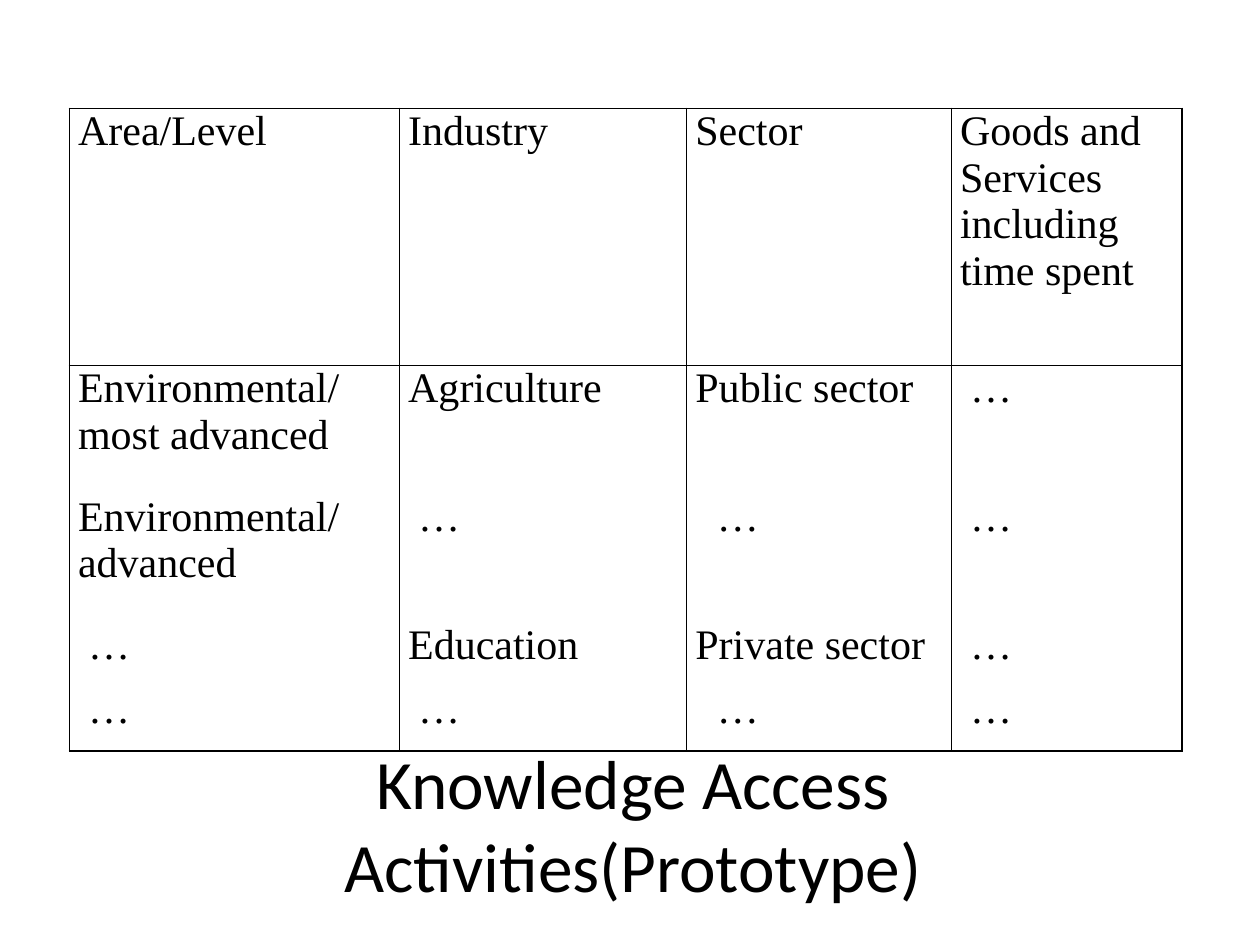
"""Build the knowledge access activities slide: a ruled table above its title."""
from lxml.etree import SubElement
from pptx import Presentation
from pptx.dml.color import RGBColor
from pptx.enum.text import MSO_ANCHOR, PP_ALIGN
from pptx.oxml.ns import qn
from pptx.util import Inches, Pt

BLACK = RGBColor(0, 0, 0)
TITLE = "Knowledge Access Activities(Prototype)"
ACTIVITIES = [
    ["Area/Level", "Industry", "Sector", "Goods and Services including time spent"],
    ["Environmental/most advanced", "Agriculture", "Public sector", "…"],
    ["Environmental/ advanced", "…", "…", "…"],
    ["…", "Education", "Private sector", "…"],
    ["…", "…", "…", "…"],
]
COLUMN_WIDTHS = [2.62, 2.28, 2.1, 1.83]
ELLIPSIS_INDENTS = [0.08, 0.08, 0.17, 0.08]
ROW_UNIT = 0.51
ROW_UNITS = [4, 2, 2, 1, 1]
LEFT, TOP = 0.55, 0.86
TITLE_WIDTH, TITLE_HEIGHT = 8.95, 1.15


def add_run(paragraph, text, font_name, size):
    run = paragraph.add_run()
    run.text = text
    run.font.name = font_name
    run.font.size = Pt(size)
    run.font.color.rgb = BLACK


def rule_cell(cell, visible_sides):
    properties = cell._tc.get_or_add_tcPr()
    for side in "LRTB":
        rule = SubElement(properties, qn(f"a:ln{side}"), w=str(Pt(1)))
        if side in visible_sides:
            fill = SubElement(rule, qn("a:solidFill"))
            SubElement(fill, qn("a:srgbClr"), val=str(BLACK))
        else:
            SubElement(rule, qn("a:noFill"))
    cell.fill.background()


def fill_cell(cell, text, indent):
    cell.margin_left = cell.margin_right = Inches(0.07)
    cell.margin_top = cell.margin_bottom = 0
    cell.vertical_anchor = MSO_ANCHOR.TOP
    paragraph = cell.text_frame.paragraphs[0]
    if text == "…":
        paragraph._p.get_or_add_pPr().set("indent", str(Inches(indent)))
    add_run(paragraph, text, "Times New Roman", 24)


def add_activities(slide):
    height = ROW_UNIT * sum(ROW_UNITS)
    table = slide.shapes.add_table(
        len(ACTIVITIES), len(COLUMN_WIDTHS), Inches(LEFT), Inches(TOP),
        Inches(sum(COLUMN_WIDTHS)), Inches(height)).table
    table.first_row = table.horz_banding = False
    for column, width in zip(table.columns, COLUMN_WIDTHS):
        column.width = Inches(width)
    last = len(ACTIVITIES) - 1
    for r, (texts, units) in enumerate(zip(ACTIVITIES, ROW_UNITS)):
        table.rows[r].height = Inches(units * ROW_UNIT)
        sides = "LR" + ("T" if r <= 1 else "") + ("B" if r in (0, last) else "")
        for c, (text, indent) in enumerate(zip(texts, ELLIPSIS_INDENTS)):
            rule_cell(table.cell(r, c), sides)
            fill_cell(table.cell(r, c), text, indent)
    return TOP + height


def add_title(slide, top):
    title = slide.shapes.title
    title.left, title.top = Inches(LEFT), Inches(top)
    title.width, title.height = Inches(TITLE_WIDTH), Inches(TITLE_HEIGHT)
    frame = title.text_frame
    frame.word_wrap = True
    frame.vertical_anchor = MSO_ANCHOR.MIDDLE
    frame.paragraphs[0].alignment = PP_ALIGN.CENTER
    add_run(frame.paragraphs[0], TITLE, "Calibri", 39.6)


def main():
    deck = Presentation()
    deck.slide_width, deck.slide_height = Inches(10), Inches(7.5)
    slide = deck.slides.add_slide(deck.slide_layouts[5])
    add_title(slide, add_activities(slide))
    deck.save("out.pptx")


if __name__ == "__main__":
    main()
